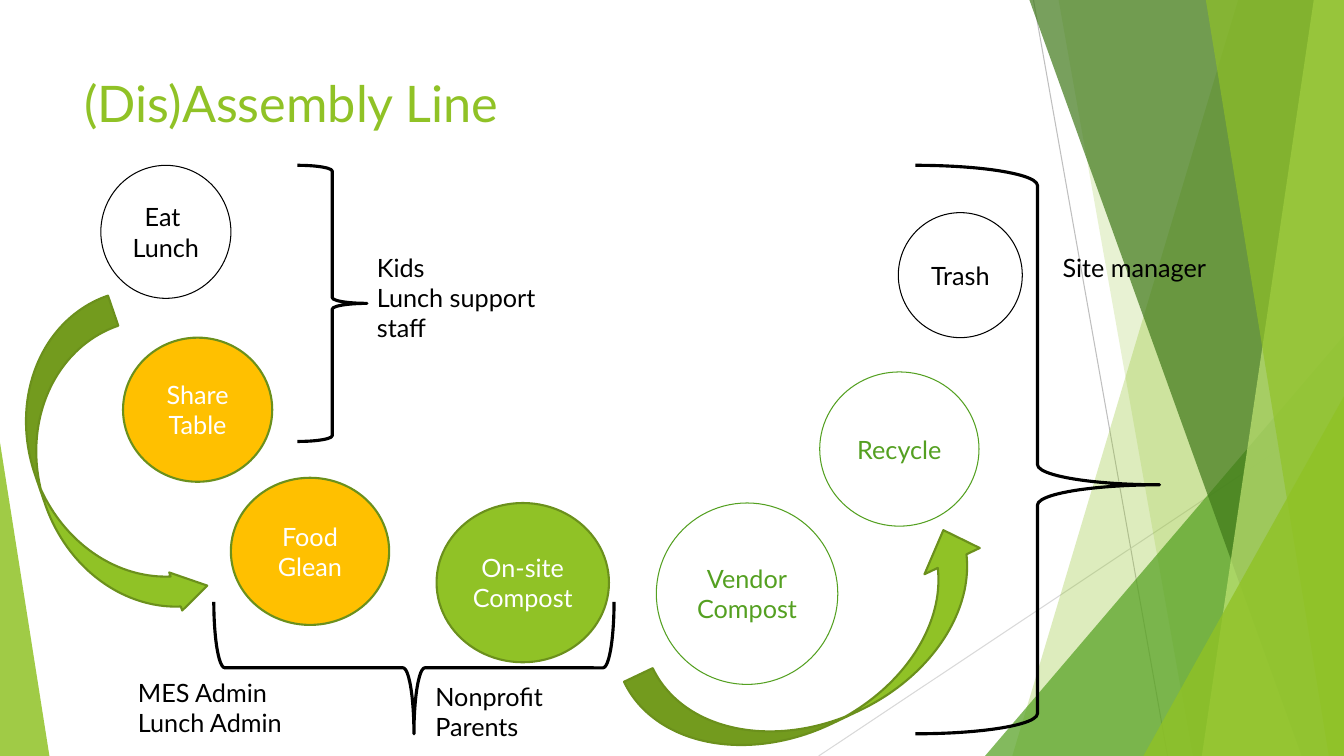
from lxml.etree import SubElement
from pptx import Presentation
from pptx.dml.color import RGBColor
from pptx.enum.shapes import MSO_CONNECTOR, MSO_SHAPE
from pptx.enum.text import MSO_ANCHOR, PP_ALIGN
from pptx.oxml.ns import qn
from pptx.util import Inches, Pt

W, H = 13.33, 7.5
LIME, GREEN, OLIVE, AMBER = "90C226", "54A021", "6B901C", "FFC000"
BLACK, WHITE = "000000", "FFFFFF"


def color(value):
    return RGBColor.from_string(value)


def style(sp, fill=None, line=None, width=0.75, opacity=100):
    sp.shadow.inherit = False
    if fill:
        sp.fill.solid()
        sp.fill.fore_color.rgb = color(fill)
        if opacity < 100:
            clr = sp.fill._xPr.find(qn("a:solidFill"))[0]
            SubElement(clr, qn("a:alpha")).set("val", str(opacity * 1000))
    else:
        sp.fill.background()
    if line:
        sp.line.color.rgb = color(line)
        sp.line.width = Pt(width)
    else:
        sp.line.fill.background()


def write(tf, lines, size, text_color, align=PP_ALIGN.LEFT):
    tf.word_wrap = True
    for i, text in enumerate(lines):
        p = tf.paragraphs[0] if i == 0 else tf.add_paragraph()
        p.text = text
        p.alignment = align
        p.font.name = "Lato"
        p.font.size = Pt(size)
        p.font.color.rgb = color(text_color)


def add_preset(s, kind, box, adj=(), rotation=0, **look):
    sp = s.shapes.add_shape(kind, *map(Inches, box))
    for i, value in enumerate(adj):
        sp.adjustments[i] = value
    sp.rotation = rotation
    style(sp, **look)
    return sp


def add_hairline(s, start, end, line):
    c = s.shapes.add_connector(MSO_CONNECTOR.STRAIGHT, *map(Inches, start + end))
    c.line.color.rgb = color(line)
    c.line.width = Pt(0.75)
    SubElement(c._element.spPr, qn("a:effectLst"))


def add_band(s, top, bottom, fill, opacity):
    fb = s.shapes.build_freeform(Inches(top), 0)
    corners = [(W, 0), (W, H), (bottom, H)]
    fb.add_line_segments([(Inches(x), Inches(y)) for x, y in corners])
    style(fb.convert_to_shape(), fill, opacity=opacity)


def add_wedge(s, box, tip, fill, opacity):
    add_preset(s, MSO_SHAPE.ISOSCELES_TRIANGLE, box, [tip], fill=fill, opacity=opacity)


def add_station(s, box, lines, text_color, fill=None, line=OLIVE, width=0.75):
    sp = add_preset(s, MSO_SHAPE.OVAL, box, fill=fill, line=line, width=width)
    sp.text_frame.vertical_anchor = MSO_ANCHOR.MIDDLE
    write(sp.text_frame, lines, 18, text_color, PP_ALIGN.CENTER)


def add_arrow(s, box, bend, rotation):
    add_preset(s, MSO_SHAPE.CURVED_RIGHT_ARROW, box, [0.25, bend, 0.25], rotation,
               fill=LIME, line=OLIVE, width=1.5)


def add_brace(s, box, point=0.5, rotation=0):
    add_preset(s, MSO_SHAPE.RIGHT_BRACE, box, [0.083, point], rotation,
               line=BLACK, width=2.25)


def add_label(s, box, lines, size=18, text_color=BLACK):
    tb = s.shapes.add_textbox(*map(Inches, box))
    write(tb.text_frame, lines, size, text_color)


def add_backdrop(s):
    add_hairline(s, (10.25, 0), (11.58, H), "BFBFBF")
    add_hairline(s, (W, 4.03), (8.12, H), "D9D9D9")
    add_band(s, 12.28, 10.04, LIME, 30)
    add_band(s, 10.5, 11.83, LIME, 20)
    add_wedge(s, (9.77, 3.33, 3.56, 4.17), 1, GREEN, 72)
    add_band(s, 10.21, 12.91, "3F7819", 70)
    add_band(s, 13.03, 11.92, "C0E474", 70)
    add_band(s, 11.96, 13.18, LIME, 65)
    add_wedge(s, (11.34, 3.93, 1.99, 3.57), 1, LIME, 80)
    add_wedge(s, (0, 4.39, 0.49, 3.11), 0, LIME, 85)


def main():
    prs = Presentation()
    prs.slide_width, prs.slide_height = Inches(W), Inches(H)
    s = prs.slides.add_slide(prs.slide_layouts[6])
    add_backdrop(s)
    add_label(s, (0.74, 0.67, 9.4, 1.44), ["(Dis)Assembly Line"], 36, LIME)

    add_station(s, (4.33, 4.99, 1.71, 1.58), ["On-site", "Compost"], WHITE, LIME, width=1.5)
    add_station(s, (2.29, 4.74, 1.57, 1.46), ["Food", "Glean"], WHITE, AMBER, width=1.5)
    add_station(s, (1.22, 3.35, 1.48, 1.43), ["Share Table"], WHITE, AMBER, width=1.5)
    add_station(s, (1, 1.64, 1.29, 1.32), ["Eat ", "Lunch"], BLACK, line=BLACK)
    add_arrow(s, (0.37, 3.05, 1.26, 3.24), 0.317, 341.1)
    add_station(s, (6.51, 4.99, 1.8, 1.8), ["Vendor", "Compost"], GREEN, line=GREEN)
    add_station(s, (8.13, 3.69, 1.58, 1.53), ["Recycle"], GREEN, line=GREEN)
    add_station(s, (8.91, 2.11, 1.23, 1.24), ["Trash"], BLACK, line=BLACK)
    add_arrow(s, (7.55, 4.61, 1.26, 3.81), 0.482, 244.6)

    add_brace(s, (9.08, 1.64, 2.42, 5.64), 0.562)
    add_label(s, (10.44, 2.45, 1.99, 0.4), ["Site manager"])
    add_brace(s, (2.95, 1.64, 0.69, 2.74))
    add_label(s, (3.64, 2.45, 2.28, 1.01), ["Kids", "Lunch support staff"])
    add_brace(s, (3.45, 4.64, 1.31, 3.97), rotation=90)
    add_label(s, (4.22, 6.71, 3.21, 0.71), ["Nonprofit", "Parents"])
    add_label(s, (1.27, 6.67, 3.21, 0.71), ["MES Admin", "Lunch Admin"])
    prs.save("out.pptx")


if __name__ == "__main__":
    main()
